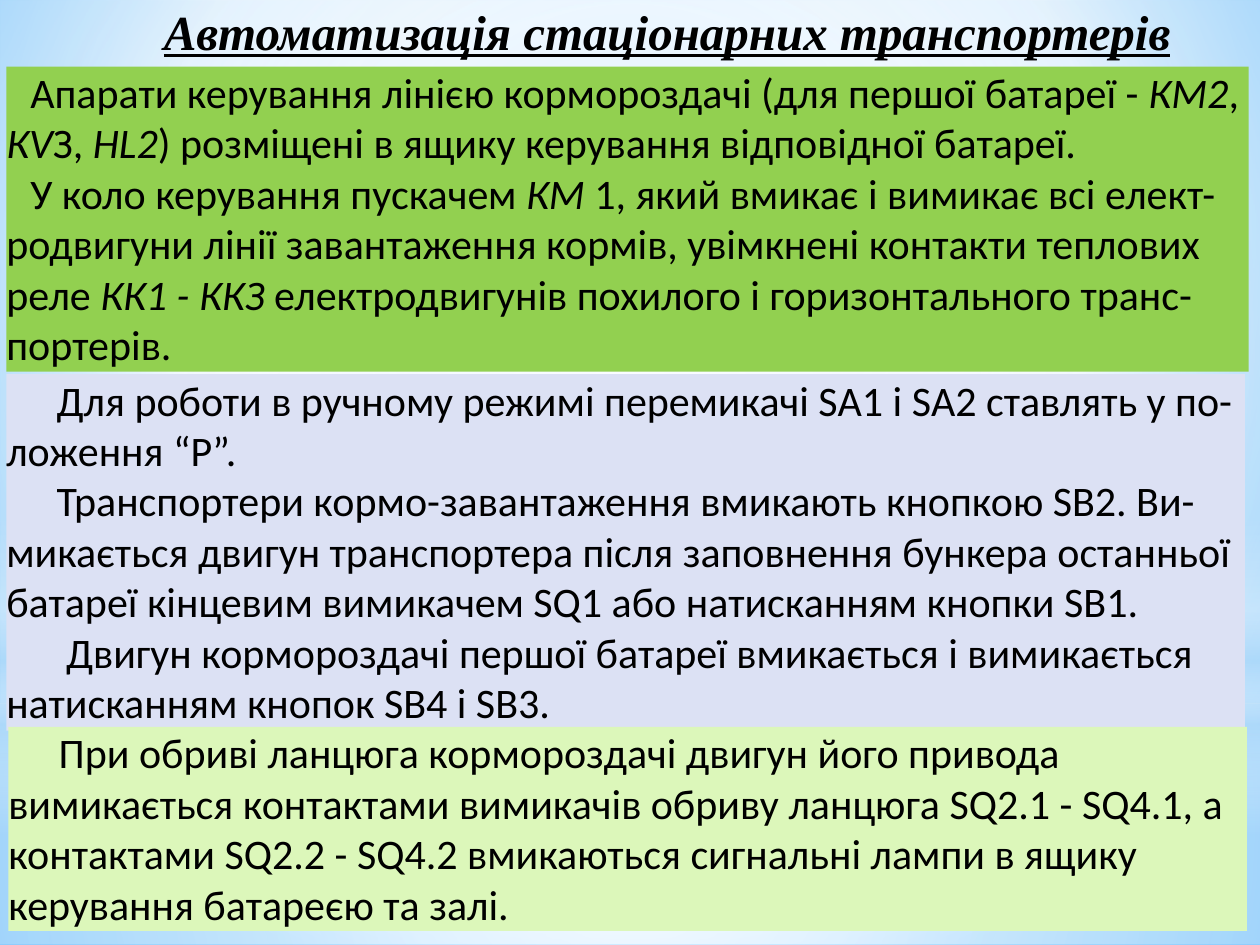
from lxml import etree
from pptx import Presentation
from pptx.dml.color import RGBColor
from pptx.enum.shapes import MSO_SHAPE as Preset
from pptx.enum.text import MSO_ANCHOR as Anchor, MSO_AUTO_SIZE as AutoSize, PP_ALIGN as Align
from pptx.oxml.ns import qn
from pptx.util import Pt

COLOURS = {
    "text": "000000", "white": "FFFFFF", "mist": "B4DCFA", "sky": "9ED5FF",
    "deep_sky": "5BB9FF", "green": "92D050", "lavender": "DCE1F4", "lime": "DCF7BA",
}
CENTRE = (50, 50, 50, 50)


class SlideWriter:
    """Draws styled elements on the current slide, with lengths in points."""

    def __init__(self, page, font="Calibri", size=24):
        self.page, self.font, self.size = page, font, size

    def gradient(self, owner, stops, focus=None):
        fill = etree.Element(qn("a:gradFill"), rotWithShape="1")
        stop_list = etree.SubElement(fill, qn("a:gsLst"))
        for position, colour, opacity in stops:
            stop = etree.SubElement(stop_list, qn("a:gs"), pos=str(position * 1000))
            tone = etree.SubElement(stop, qn("a:srgbClr"), val=COLOURS[colour])
            if opacity < 100:
                etree.SubElement(tone, qn("a:alpha"), val=str(opacity * 1000))
        if focus:
            shade = etree.SubElement(fill, qn("a:path"), path="circle")
            edges = {side: str(value * 1000) for side, value in zip("ltrb", focus)}
            etree.SubElement(shade, qn("a:fillToRect"), edges)
        else:
            etree.SubElement(fill, qn("a:lin"), ang="5400000", scaled="0")
        solid = owner.find(".//" + qn("a:solidFill"))
        solid.getparent().replace(solid, fill)

    def background(self, stops, focus):
        self.page.background.fill.solid()
        self.gradient(self.page.element, stops, focus)

    def shape(self, bounds, preset=Preset.RECTANGLE):
        shape = self.page.shapes.add_shape(preset, *map(Pt, bounds))
        shape.shadow.inherit = False
        shape.line.fill.background()
        shape.fill.solid()
        return shape

    def glow(self, bounds, stops, focus=None, preset=Preset.RECTANGLE):
        self.gradient(self.shape(bounds, preset).element, stops, focus)

    def frame(self, box, wrap=True):
        frame = box.text_frame
        frame.margin_left = frame.margin_top = frame.margin_right = frame.margin_bottom = 0
        frame.word_wrap = wrap
        frame.auto_size = AutoSize.SHAPE_TO_FIT_TEXT
        frame.vertical_anchor = Anchor.TOP
        return frame

    def span(self, para, text, italic=False):
        span = para.add_run()
        span.text = text
        span.font.name, span.font.size = self.font, Pt(self.size)
        span.font.italic = italic
        span.font.color.rgb = RGBColor.from_string(COLOURS["text"])
        return span

    def panel(self, bounds, colour, paragraphs):
        box = self.shape(bounds)
        box.fill.fore_color.rgb = RGBColor.from_string(COLOURS[colour])
        frame = self.frame(box)
        for number, (indent, *texts) in enumerate(paragraphs):
            para = frame.add_paragraph() if number else frame.paragraphs[0]
            para.alignment = Align.LEFT
            properties = para._p.get_or_add_pPr()
            properties.set("marL", "0")
            properties.set("indent", str(Pt(indent)))
            for index, text in enumerate(texts):
                self.span(para, text, italic=index % 2 == 1)

    def title(self, bounds, text):
        box = self.page.shapes.add_textbox(*map(Pt, bounds))
        span = self.span(self.frame(box, wrap=False).paragraphs[0], text, italic=True)
        span.font.name, span.font.size = "Times New Roman", Pt(28)
        span.font.bold = span.font.underline = True


def main():
    deck = Presentation()
    deck.slide_width, deck.slide_height = Pt(720), Pt(540)
    writer = SlideWriter(deck.slides.add_slide(deck.slide_layouts[6]))

    writer.background(
        [(0, "sky", 100), (60, "white", 100), (100, "deep_sky", 100)], (20, 10, 20, 60))
    writer.glow((0, 402, 720, 138),
                [(0, "white", 91), (37, "white", 76), (100, "mist", 79)], CENTRE)
    writer.glow((0, 0, 720, 402),
                [(0, "white", 89), (48, "white", 62), (100, "mist", 79)], CENTRE)
    writer.glow((0, 296.6, 720, 180),
                [(0, "white", 0), (29, "white", 30), (45, "mist", 40),
                 (55, "white", 26), (65, "mist", 60), (100, "white", 0)])
    writer.glow((0, 126, 720, 402), [(0, "white", 100), (56, "white", 0)], CENTRE, Preset.OVAL)

    writer.panel((3.6, 38, 710, 174.3), "green", [
        (13.7, "Апарати керування лінією кормороздачі (для першої батареї - ", "КМ2", ", ",
         "КV", "З, ", "НL2", ") розміщені в ящику керування відповідної батареї."),
        (13.7, "У коло керування пускачем ", "КМ",
         " 1, який вмикає і вимикає всі елект-родвигуни лінії завантаження кормів, "
         "увімкнені контакти теплових реле ", "КК1 - ККЗ",
         " електродвигунів похилого і горизонтального транс-портерів."),
    ])
    writer.panel((3.6, 213.8, 707.8, 203.8), "lavender", [
        (28.8, "Для роботи в ручному режимі перемикачі SА1 і SА2 ставлять у по-ложення “Р”."),
        (28.8, "Транспортери кормо-завантаження вмикають кнопкою SB2. Ви-микається двигун "
         "транспортера після заповнення бункера останньої батареї кінцевим вимикачем SQ1 "
         "або натисканням кнопки SB1."),
        (34.2, "Двигун кормороздачі першої батареї вмикається і вимикається "
         "натисканням кнопок SB4 і SB3."),
    ])
    writer.panel((4.8, 415.4, 707.8, 116.6), "lime", [
        (28.8, "При обриві ланцюга кормороздачі двигун його привода вимикається контактами "
         "вимикачів обриву ланцюга SQ2.1 - SQ4.1, а контактами SQ2.2 - SQ4.2 вмикаються "
         "сигнальні лампи в ящику керування батареєю та залі."),
    ])
    writer.title((93.6, 0.7, 581, 33.8), "Автоматизація стаціонарних транспортерів")
    deck.save("out.pptx")


if __name__ == "__main__":
    main()
